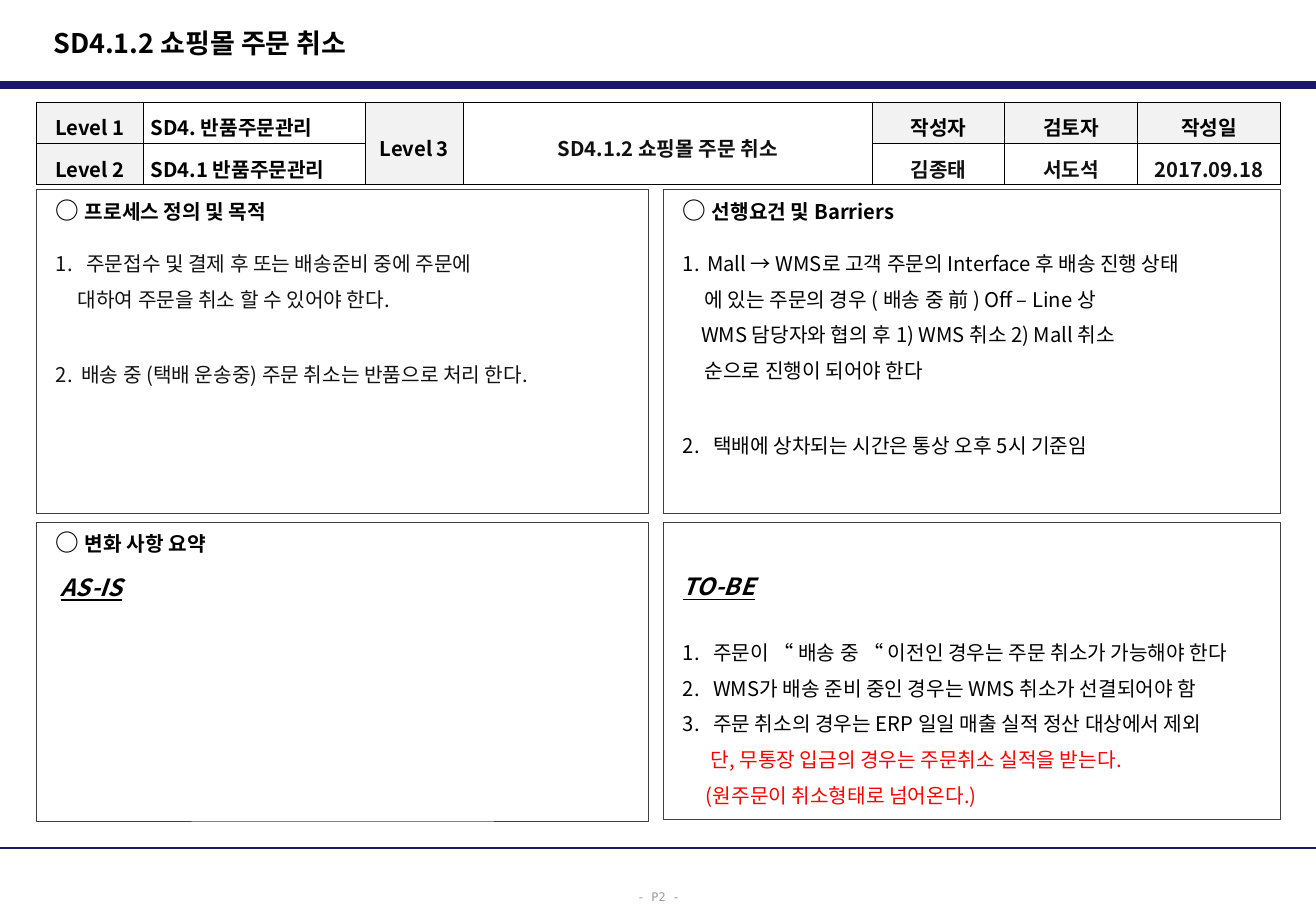
from lxml import etree
from pptx import Presentation
from pptx import util as u
from pptx.dml.color import RGBColor
from pptx.enum import shapes, text
from pptx.oxml import ns

PX = 9144  # 100 px to the inch
FONT = "Noto Sans CJK KR"
BLACK = RGBColor(0x00, 0x00, 0x00)
INK = RGBColor(0x11, 0x11, 0x11)
RED = RGBColor(0xFF, 0x00, 0x00)
NAVY = RGBColor(0x19, 0x19, 0x66)
GREY = RGBColor(0x96, 0x96, 0x96)
EDGE = RGBColor(0x40, 0x40, 0x40)
HEADER_FILL = RGBColor(0xF2, 0xF2, 0xF2)

BODY = {"size": u.Pt(12), "bold": False}
STRONG = {"size": u.Pt(12), "bold": True}
MARK = {"size": u.Pt(14), "bold": True}
STATE = {"size": u.Pt(14), "bold": True, "italic": True, "underline": True}
TITLE = {"size": u.Pt(16), "bold": True}
LINE_GAP = 2.4
HEADING_GAP = 12
BLANK_GAP = 23.5

COLUMNS = [88, 183, 80, 337, 109, 109, 118]
ROWS = [
    ["Level 1", "SD4. 반품주문관리", "Level 3", "SD4.1.2 쇼핑몰 주문 취소",
     "작성자", "검토자", "작성일"],
    ["Level 2", "SD4.1 반품주문관리", None, None,
     "김종태", "서도석", "2017.09.18"],
]
HEADER_CELLS = {(0, 0), (1, 0), (0, 2), (0, 4), (0, 5), (0, 6)}
INK_CELLS = {(0, 3), (1, 4), (1, 5), (1, 6)}


def px(*lengths):
    return [u.Emu(length * PX) for length in lengths]


def apply(target, values):
    for name, value in values.items():
        setattr(target, name, value)


def add_run(paragraph, words, style, color=BLACK, name=FONT):
    run = paragraph.add_run()
    run.text = words
    apply(run.font, {**style, "name": name})
    run.font.color.rgb = color
    east_asian = etree.SubElement(run.font._element, ns.qn("a:ea"))
    east_asian.set("typeface", name)


def set_margins(target, left, top, right, bottom):
    sides = ("margin_left", "margin_top", "margin_right", "margin_bottom")
    apply(target, dict(zip(sides, px(left, top, right, bottom))))


def next_paragraph(frame):
    first = frame.paragraphs[0]
    return frame.add_paragraph() if first.runs else first


def set_indent(paragraph, left, number=None):
    """Indent by left px, hanging an automatic number there if one is given."""
    properties = paragraph._p.get_or_add_pPr()
    properties.set("marL", str(left * PX))
    if number:
        properties.set("indent", str(-left * PX))
        numbering = etree.SubElement(properties, ns.qn("a:buAutoNum"))
        numbering.set("type", "arabicPeriod")
        numbering.set("startAt", str(number))


def add_heading(frame, words):
    paragraph = next_paragraph(frame)
    add_run(paragraph, "○ ", MARK)
    add_run(paragraph, words, STRONG)


def add_state(frame, words, gap=0, left=0):
    paragraph = next_paragraph(frame)
    if gap:
        paragraph.space_before = u.Pt(gap)
    set_indent(paragraph, left)
    add_run(paragraph, words, STATE)


def add_item(frame, words, left, number=None, gap=LINE_GAP, color=BLACK):
    paragraph = next_paragraph(frame)
    set_indent(paragraph, left, number)
    apply(paragraph, {"line_spacing": 1.3, "space_before": u.Pt(gap)})
    add_run(paragraph, words, BODY, color)


def add_panel(slide, left, top, width, height, inset_top=5):
    shape = slide.shapes.add_shape(
        shapes.MSO_SHAPE.RECTANGLE, *px(left, top, width, height))
    shape.shadow.inherit = False
    shape.fill.background()
    shape.line.color.rgb = EDGE
    shape.line.width = u.Pt(0.5)
    frame = shape.text_frame
    set_margins(frame, 16, inset_top, 10, 5)
    apply(frame, {"word_wrap": True, "vertical_anchor": text.MSO_ANCHOR.TOP})
    frame.paragraphs[0].alignment = text.PP_ALIGN.LEFT
    return frame


def finish_panel(frame):
    for paragraph in frame.paragraphs:
        paragraph.alignment = text.PP_ALIGN.LEFT


def add_rule(slide, y, weight):
    rule = slide.shapes.add_connector(
        shapes.MSO_CONNECTOR.STRAIGHT, *px(0, y, 1083, y))
    rule.line.color.rgb = NAVY
    rule.line.width = u.Pt(weight)
    etree.SubElement(rule._element.spPr, ns.qn("a:effectLst"))


def add_label(slide, box, words, style, color=BLACK, name=FONT, wrap=True,
              align=text.PP_ALIGN.LEFT):
    frame = slide.shapes.add_textbox(*px(*box)).text_frame
    apply(frame, {"word_wrap": wrap, "vertical_anchor": text.MSO_ANCHOR.MIDDLE})
    frame.paragraphs[0].alignment = align
    add_run(frame.paragraphs[0], words, style, color, name)


def set_borders(cell):
    properties = cell._tc.get_or_add_tcPr()
    for index, side in enumerate(("lnL", "lnR", "lnT", "lnB")):
        border = etree.Element(ns.qn("a:" + side), w=str(u.Pt(0.5)))
        fill = etree.SubElement(border, ns.qn("a:solidFill"))
        etree.SubElement(fill, ns.qn("a:srgbClr"), val=str(BLACK))
        properties.insert(index, border)


def add_level_table(slide):
    table = slide.shapes.add_table(
        len(ROWS), len(COLUMNS), *px(30, 84, sum(COLUMNS), 68)).table
    apply(table, {"first_row": False, "horz_banding": False})
    for column, width in zip(table.columns, px(*COLUMNS)):
        column.width = width
    for row in table.rows:
        row.height = px(34)[0]
    for column in (2, 3):
        table.cell(0, column).merge(table.cell(1, column))
    for r, words_in_row in enumerate(ROWS):
        for c, words in enumerate(words_in_row):
            cell = table.cell(r, c)
            if (r, c) in HEADER_CELLS:
                cell.fill.solid()
                cell.fill.fore_color.rgb = HEADER_FILL
            else:
                cell.fill.background()
            set_borders(cell)
            if words is None:
                continue
            set_margins(cell, 6, 1, 6, 1)
            cell.vertical_anchor = text.MSO_ANCHOR.MIDDLE
            paragraph = cell.text_frame.paragraphs[0]
            align = text.PP_ALIGN.LEFT if c == 1 else text.PP_ALIGN.CENTER
            apply(paragraph, {"alignment": align, "line_spacing": 1.3})
            add_run(paragraph, words, STRONG, INK if (r, c) in INK_CELLS else BLACK)


def add_panels(slide):
    purpose = add_panel(slide, 30, 156, 504, 267)
    add_heading(purpose, "프로세스 정의 및 목적")
    add_item(purpose, "주문접수 및 결제 후 또는 배송준비 중에 주문에", 25, 1, HEADING_GAP, INK)
    add_item(purpose, "대하여 주문을 취소 할 수 있어야 한다.", 18, color=INK)
    add_item(purpose, "배송 중 (택배 운송중) 주문 취소는 반품으로 처리 한다.", 21, 2,
             BLANK_GAP + LINE_GAP, INK)

    barriers = add_panel(slide, 546, 156, 508, 267)
    add_heading(barriers, "선행요건 및 Barriers")
    add_item(barriers, "Mall → WMS로 고객 주문의 Interface 후 배송 진행 상태", 20, 1, HEADING_GAP)
    add_item(barriers, "에 있는 주문의 경우 ( 배송 중 前 ) Off – Line 상", 18)
    add_item(barriers, "WMS 담당자와 협의 후 1) WMS 취소 2) Mall 취소", 15)
    add_item(barriers, "순으로 진행이 되어야 한다", 18)
    add_item(barriers, "택배에 상차되는 시간은 통상 오후 5시 기준임", 25, 2, BLANK_GAP + LINE_GAP)

    as_is = add_panel(slide, 30, 430, 504, 246)
    add_heading(as_is, "변화 사항 요약")
    add_state(as_is, "AS-IS", 9.5, 4)

    to_be = add_panel(slide, 546, 430, 508, 245, 41)
    add_state(to_be, "TO-BE")
    add_item(to_be, "주문이 “ 배송 중 “ 이전인 경우는 주문 취소가 가능해야 한다", 25, 1, 19.4)
    add_item(to_be, "WMS가 배송 준비 중인 경우는 WMS 취소가 선결되어야 함", 25, 2)
    add_item(to_be, "주문 취소의 경우는 ERP 일일 매출 실적 정산 대상에서 제외", 25, 3)
    add_item(to_be, "단, 무통장 입금의 경우는 주문취소 실적을 받는다.", 23, color=RED)
    add_item(to_be, "(원주문이 취소형태로 넘어온다.)", 19, color=RED)

    for frame in (purpose, barriers, as_is, to_be):
        finish_panel(frame)


def main():
    presentation = Presentation()
    presentation.slide_width, presentation.slide_height = px(1083, 750)
    slide = presentation.slides.add_slide(presentation.slide_layouts[6])
    add_rule(slide, 70, 4.5)
    add_rule(slide, 698, 1.5)
    add_label(slide, (34, 16, 711, 38), "SD4.1.2 쇼핑몰 주문 취소", TITLE)
    add_level_table(slide)
    add_panels(slide)
    add_label(slide, (514, 726, 56, 25), "- P2 -", {"size": u.Pt(7)}, GREY,
              "DejaVu Sans Mono", False, text.PP_ALIGN.CENTER)
    presentation.save("out.pptx")


if __name__ == "__main__":
    main()
